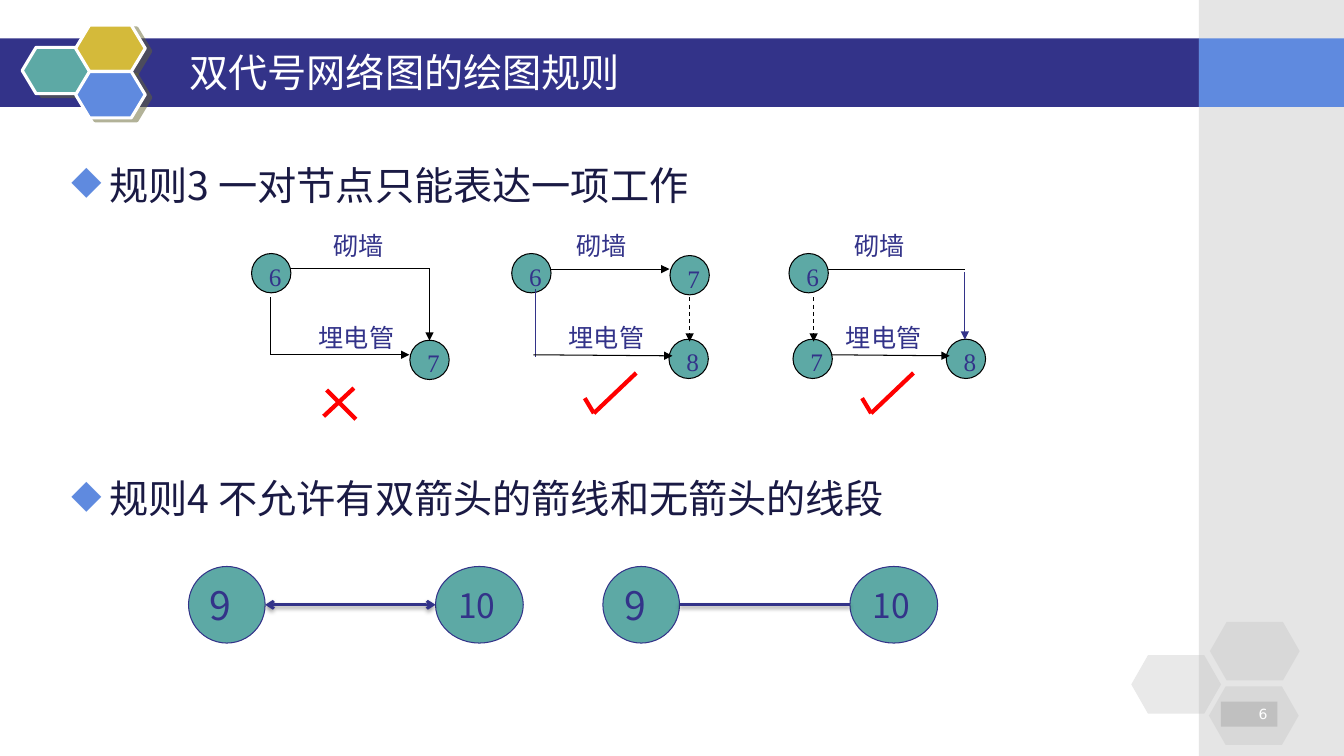
from lxml import etree
from pptx import Presentation, util as u
from pptx.dml.color import RGBColor
from pptx.enum import dml, shapes as s, text as t
from pptx.oxml import ns

WIDTH, HEIGHT = 13.33, 7.5
NAVY = RGBColor(0x33, 0x33, 0x89)
INK = RGBColor(0x1A, 0x1A, 0x44)
BLUE = RGBColor(0x5F, 0x8A, 0xDF)
TEAL = RGBColor(0x5D, 0xA9, 0xA5)
GOLD = RGBColor(0xD4, 0xBA, 0x3A)
OLIVE = RGBColor(0x66, 0x66, 0x33)
GREY = RGBColor(0xC0, 0xC0, 0xC0)
RED = RGBColor(0xFF, 0, 0)
BLACK = RGBColor(0, 0, 0)
WHITE = RGBColor(0xFF, 0xFF, 0xFF)
SANS, SERIF = "Noto Sans CJK SC", "Times New Roman"


# --- Basic parts ---
def add_xml(parent, tag, **attributes):
    return etree.SubElement(parent, ns.qn(tag), {k: str(v) for k, v in attributes.items()})


def add_shadow(effects, color, alpha, blur, distance, angle):
    shadow = add_xml(effects, "a:outerShdw", blurRad=u.Pt(blur), dist=u.Pt(distance),
                     dir=angle * 60000, algn="ctr", rotWithShape=0)
    tone = add_xml(shadow, "a:srgbClr", val=color)
    add_xml(tone, "a:alpha", val=alpha * 1000)


def add_block(slide, kind, box, fill, line=None, weight=0.75, alpha=None):
    block = slide.shapes.add_shape(kind, *map(u.Inches, box))
    block.fill.solid()
    block.fill.fore_color.rgb = fill
    if alpha:
        tone = block.fill._xPr.find(".//" + ns.qn("a:srgbClr"))
        add_xml(tone, "a:alpha", val=alpha * 1000)
    if line is None:
        block.line.fill.background()
    else:
        block.line.color.rgb = line
        block.line.width = u.Pt(weight)
    block.shadow.inherit = False
    return block


def write(holder, words, size, color, font=SANS, align=t.PP_ALIGN.LEFT,
          insets=(0.1, 0.05, 0.1, 0.05), wrap=True):
    frame = holder.text_frame
    frame.word_wrap = wrap
    frame.vertical_anchor = t.MSO_ANCHOR.MIDDLE
    (frame.margin_left, frame.margin_top,
     frame.margin_right, frame.margin_bottom) = map(u.Inches, insets)
    paragraph = frame.paragraphs[0]
    paragraph.text = words
    paragraph.alignment = align
    paragraph.font.size = u.Pt(size)
    paragraph.font.name = font
    paragraph.font.color.rgb = color
    return paragraph


def add_words(slide, box, words, size, color, **options):
    return write(slide.shapes.add_textbox(*map(u.Inches, box)), words, size, color, **options)


def add_line(slide, start, end, color=BLACK, weight=0.75, head=None, tail=None, dashed=False):
    line = slide.shapes.add_connector(s.MSO_CONNECTOR.STRAIGHT, *map(u.Inches, (*start, *end)))
    line.line.color.rgb = color
    line.line.width = u.Pt(weight)
    if dashed:
        line.line.dash_style = dml.MSO_LINE.DASH
    for tag, tip in (("a:headEnd", head), ("a:tailEnd", tail)):
        if tip:
            add_xml(line.line._get_or_add_ln(), tag, type=tip)
    return add_xml(line._element.spPr, "a:effectLst")


# --- Frame of the slide ---
def add_hexagons(slide, spots, size, adjust, fills, line=None, alpha=None):
    for spot, fill in zip(spots, fills):
        hexagon = add_block(slide, s.MSO_SHAPE.HEXAGON, (*spot, *size), fill, line, 2.25, alpha)
        hexagon.adjustments[0] = adjust
        if line is not None:
            effects = hexagon._element.spPr.find(ns.qn("a:effectLst"))
            add_shadow(effects, OLIVE, 50, 0, 4.5, 27)


def add_frame(slide, title, number):
    side, top, band = 11.89, 0.38, 0.68
    rect = s.MSO_SHAPE.RECTANGLE
    add_block(slide, rect, (0, top, side, band), NAVY)
    add_block(slide, rect, (side, 0, WIDTH - side, HEIGHT), GREY, alpha=40)
    add_block(slide, rect, (side, top, WIDTH - side, band), BLUE)
    add_hexagons(slide, [(0.22, 0.47), (0.75, 0.25), (0.75, 0.71)], (0.69, 0.46), 0.3,
                 (TEAL, GOLD, BLUE), WHITE)
    add_hexagons(slide, [(11.22, 6.5), (12, 6.17), (11.99, 6.81)], (0.89, 0.58), 0.286,
                 [GREY] * 3, alpha=35)
    page = add_block(slide, rect, (12.11, 6.96, 0.56, 0.25), GREY)
    write(page, number, 10, WHITE, font="DejaVu Sans", align=t.PP_ALIGN.RIGHT)
    add_words(slide, (1.78, 0.42, 9.67, 0.58), title, 28, WHITE)


def add_rule(slide, top, words):
    rule = add_words(slide, (0.61, top, 11.24, 0.8), words, 28, INK)
    properties = rule._p.get_or_add_pPr()
    properties.set("marL", str(u.Inches(0.38)))
    properties.set("indent", str(-u.Inches(0.38)))
    bullet_color = etree.Element(ns.qn("a:buClr"))
    add_xml(bullet_color, "a:srgbClr", val=BLUE)
    bullet = etree.Element(ns.qn("a:buChar"), {"char": "◆"})
    properties.insert(0, bullet_color)
    properties.insert(1, bullet)


# --- Rule 3: networks, all lengths relative to the left and top given ---
ARROW = {"tail": "triangle"}
DUMMY = {"tail": "triangle", "dashed": True}
CROSS = [((1.02, 1.56), (0.72, 1.84)), ((0.75, 1.58), (1.04, 1.87))]
TICK = [((0.73, 1.66), (0.82, 1.81)), ((0.82, 1.81), (1.24, 1.41))]
NETWORKS = [
    {"left": 2.49, "works": (0.82, 0.67), "mark": CROSS,
     "nodes": [("6", 0.2, 0.42), ("7", 1.77, 1.28)],
     "links": [((0.39, 0.37), (1.77, 0.37), {}), ((1.77, 0.37), (1.77, 1.09), ARROW),
               ((0.19, 0.66), (0.19, 1.23), {}), ((0.19, 1.23), (1.57, 1.23), ARROW)]},
    {"left": 5.07, "works": (0.65, 0.57), "mark": TICK,
     "nodes": [("6", 0.2, 0.42), ("7", 1.77, 0.44), ("8", 1.76, 1.27)],
     "links": [((0.39, 0.38), (1.57, 0.38), ARROW), ((1.77, 0.66), (1.77, 1.1), DUMMY),
               ((0.24, 0.58), (0.24, 1.25), {"color": NAVY}),
               ((0.22, 1.23), (1.6, 1.24), ARROW)]},
    {"left": 7.82, "works": (0.65, 0.57), "mark": TICK,
     "nodes": [("6", 0.2, 0.42), ("7", 0.24, 1.27), ("8", 1.76, 1.27)],
     "links": [((0.39, 0.38), (1.75, 0.38), {}), ((0.25, 0.66), (0.25, 1.1), DUMMY),
               ((1.75, 0.41), (1.75, 1.08), {**ARROW, "color": NAVY}),
               ((0.42, 1.23), (1.6, 1.24), ARROW)]},
]


def add_network(slide, top, left, works, mark, nodes, links):
    def place(point):
        return left + point[0], top + point[1]

    size = 0.39
    for number, x, y in nodes:
        box = (*place((x - size / 2, y - size / 2)), size, size)
        node = add_block(slide, s.MSO_SHAPE.OVAL, box, TEAL, BLACK)
        write(node, number, 18, NAVY, font=SERIF, align=t.PP_ALIGN.CENTER,
              insets=(0.08, 0.06, 0, 0), wrap=False)
    for start, end, style in links:
        add_line(slide, place(start), place(end), **style)
    for work, x, y in zip(("砌墙", "埋电管"), works, (0, 0.91)):
        add_words(slide, (*place((x, y)), 0.82, 0.29), work, 18, NAVY, font=SERIF,
                  insets=(0, 0, 0, 0), wrap=False)
    for start, end in mark:
        add_line(slide, place(start), place(end), RED, 3)


# --- Rule 4: a pair of nodes with a forbidden link ---
def add_pair(slide, left, top, tip):
    height, first, second, gap = 0.76, 0.76, 0.87, 1.69
    right = left + first + gap
    for number, x, width, size in (("9", left, first, 28), ("10", right, second, 24)):
        node = add_block(slide, s.MSO_SHAPE.OVAL, (x, top, width, height), TEAL, NAVY)
        write(node, number, size, NAVY, wrap=False)
    middle = top + height / 2
    effects = add_line(slide, (left + first, middle), (right, middle), NAVY, 2, tip, tip)
    add_shadow(effects, BLACK, 38, 3.1, 1.6, 90)


def main():
    deck = Presentation()
    deck.slide_width, deck.slide_height = u.Inches(WIDTH), u.Inches(HEIGHT)
    slide = deck.slides.add_slide(deck.slide_layouts[6])
    add_frame(slide, "双代号网络图的绘图规则", "6")
    add_rule(slide, 1.43, "规则3 一对节点只能表达一项工作")
    for network in NETWORKS:
        add_network(slide, 2.29, **network)
    add_rule(slide, 4.54, "规则4 不允许有双箭头的箭线和无箭头的线段")
    for left, tip in ((1.87, "arrow"), (5.98, None)):
        add_pair(slide, left, 5.62, tip)
    deck.save("out.pptx")


if __name__ == "__main__":
    main()
